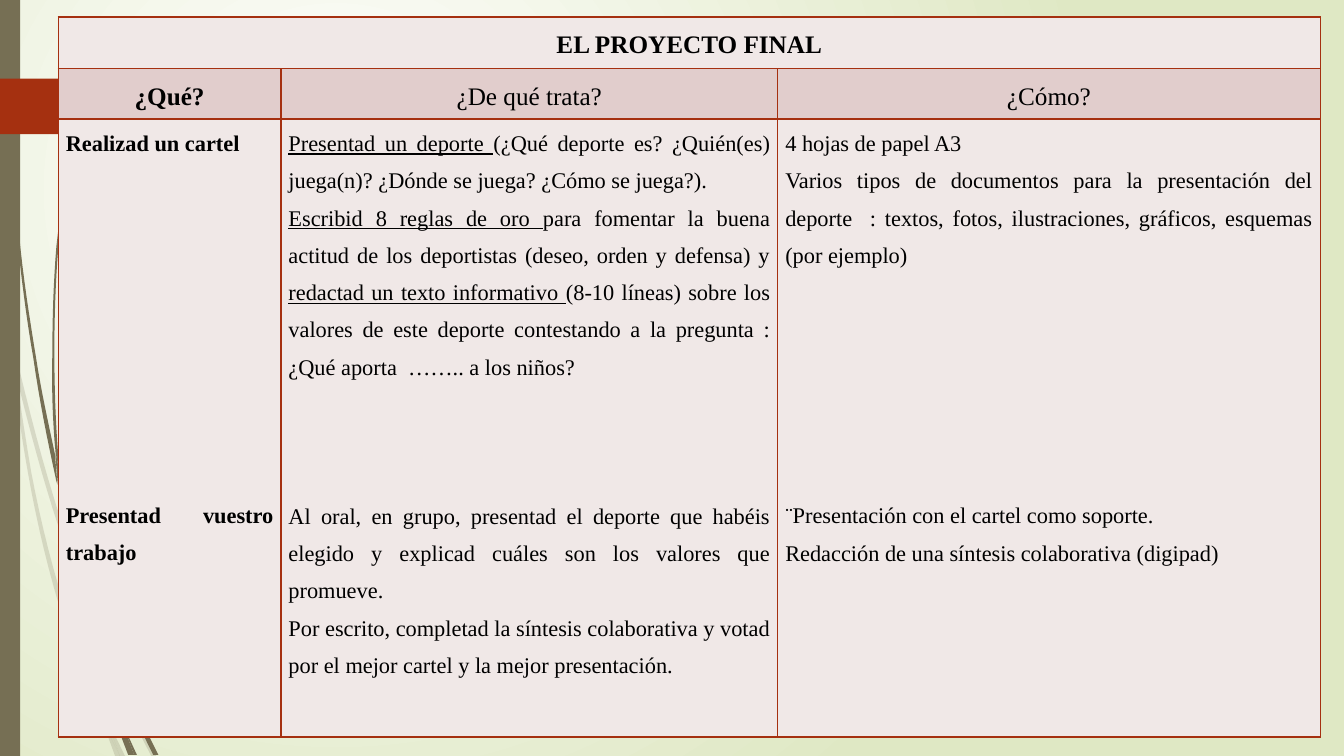
from dataclasses import dataclass
from itertools import product

from lxml.etree import SubElement
from pptx import Presentation
from pptx.dml.color import RGBColor
from pptx.enum.shapes import MSO_SHAPE
from pptx.enum.text import PP_ALIGN
from pptx.oxml import parse_xml
from pptx.oxml.ns import nsdecls, qn
from pptx.shapes.autoshape import Shape
from pptx.slide import Slide
from pptx.table import _Cell
from pptx.util import Cm, Pt

WHITE = RGBColor(0xFF, 0xFF, 0xFF)
BLACK = RGBColor(0x00, 0x00, 0x00)
PALE_GREEN = RGBColor(0xDF, 0xE8, 0xC4)
OLIVE = RGBColor(0x76, 0x6F, 0x54)
RUST = RGBColor(0xA5, 0x30, 0x10)
LIGHT_ROSE = RGBColor(0xF0, 0xE8, 0xE7)
ROSE = RGBColor(0xE1, 0xCD, 0xCC)

FONT = "Times New Roman"
LINE_SPACING = 1.5
BODY_SIZE = 16
HEADING_SIZE = 18
BODY_LINE = BODY_SIZE * 1.107 * LINE_SPACING
CURVE_STEPS = 8

COLUMN_WIDTHS = (5.61, 12.52, 13.67)
ROW_HEIGHTS = (1.3, 1.27, 15.57)


@dataclass(frozen=True)
class Phrase:
    text: str
    underlined: bool = False


@dataclass(frozen=True)
class Passage:
    phrases: tuple[Phrase, ...]
    lines_above: int = 0
    bold: bool = False
    size: int = BODY_SIZE
    align: PP_ALIGN = PP_ALIGN.JUSTIFY


@dataclass(frozen=True)
class Blade:
    start: tuple[float, float]
    segments: tuple[tuple[float, ...], ...]
    opacity: int = 100


def passage(text: str, lines_above: int = 0, bold: bool = False) -> Passage:
    return Passage((Phrase(text),), lines_above, bold)


def heading(text: str, bold: bool = False) -> Passage:
    return Passage((Phrase(text),), 0, bold, HEADING_SIZE, PP_ALIGN.CENTER)


PALE_BLADES = (
    Blade((1.47, 13.26), (
        (1.68, 13.92, 1.91, 14.55, 2.13, 15.21), (2.16, 14.88), (1.57, 13.21),
        (1.09, 11.76, 0.71, 10.26, 0.36, 8.76), (0.43, 9.55),
        (0.74, 10.8, 1.07, 12.04, 1.47, 13.26)), 20),
    Blade((2.34, 15.42), (
        (2.24, 15.14), (2.24, 15.49), (2.51, 16.23, 2.79, 16.92, 3.12, 17.63),
        (3.33, 18.11, 3.58, 18.59, 3.81, 19.05), (3.94, 19.05),
        (3.68, 18.57, 3.45, 18.08, 3.23, 17.58),
        (2.92, 16.87, 2.62, 16.15, 2.34, 15.42)), 20),
    Blade((3.02, 19.05), ((3.15, 19.05), (2.67, 18.06)), 20),
    Blade((2.36, 17.35), (
        (2.13, 16.81, 1.96, 16.28, 1.78, 15.72),
        (1.35, 14.48, 1.04, 13.21, 0.79, 11.91),
        (0.66, 11.13, 0.53, 10.34, 0.43, 9.55), (0.28, 8.89),
        (0.38, 9.91, 0.53, 10.92, 0.71, 11.94),
        (0.94, 13.23, 1.24, 14.5, 1.65, 15.77),
        (1.85, 16.41, 2.08, 17.02, 2.34, 17.6), (2.57, 18.14), (2.51, 17.96)), 20),
    Blade((2.57, 18.14), ((2.9, 19.05), (3.02, 19.05)), 20),
    Blade((2.44, 17.58), (
        (2.36, 17.35), (2.51, 17.96), (2.57, 18.14), (3.02, 19.05), (2.67, 18.06)), 20),
)
DARK_BLADES = (
    Blade((0.18, 2.79), (
        (0.23, 3.84, 0.3, 4.88, 0.43, 5.92), (0.53, 6.96, 0.66, 7.98, 0.84, 9.02),
        (0.99, 10.06, 1.19, 11.07, 1.42, 12.12), (1.45, 12.22), (1.4, 11.61),
        (1.4, 11.51), (1.22, 10.67, 1.04, 9.86, 0.91, 9.02),
        (0.74, 7.98, 0.58, 6.96, 0.48, 5.89), (0.36, 4.85, 0.25, 3.84, 0.2, 2.77),
        (0.13, 1.22), (0.1, 0), (0.08, 0), (0.1, 1.22))),
    Blade((2.87, 16.48), (
        (2.79, 16.28), (2.82, 16.66), (2.97, 17.12, 3.15, 17.55, 3.35, 17.98),
        (3.86, 19.02), (3.99, 19.02), (3.45, 17.93),
        (3.25, 17.45, 3.07, 16.97, 2.87, 16.48))),
    Blade((1.52, 11.99), (
        (1.47, 11.51), (1.4, 10.62, 1.37, 9.75, 1.37, 8.86),
        (1.37, 7.98, 1.4, 7.11, 1.47, 6.22), (1.6, 4.9), (1.78, 3.58), (1.57, 4.9),
        (1.42, 6.22), (1.35, 7.09, 1.32, 7.98, 1.32, 8.86),
        (1.3, 9.7, 1.32, 10.57, 1.4, 11.4))),
    Blade((1.45, 12.12), ((1.63, 12.83), (1.52, 11.99), (1.4, 11.4), (1.4, 11.51))),
    Blade((3.38, 19.02), ((3.45, 19.02), (3.1, 18.26))),
    Blade((2.97, 18.34), ((3.23, 19.02), (3.33, 19.02))),
    Blade((2.95, 17.93), (
        (2.79, 17.55), (2.95, 18.21), (2.97, 18.34), (3.3, 19.02), (3.38, 19.02),
        (3.1, 18.26))),
)

PROJECT_ROWS = (
    ((heading("EL PROYECTO FINAL", bold=True),), (), ()),
    ((heading("¿Qué?", bold=True),), (heading("¿De qué trata?"),), (heading("¿Cómo?"),)),
    (
        (passage("Realizad un cartel", bold=True),
         passage("Presentad vuestro trabajo", 9, bold=True)),
        (Passage((
            Phrase("Presentad un deporte ", True),
            Phrase("(¿Qué deporte es? ¿Quién(es) juega(n)? ¿Dónde se juega? ¿Cómo se juega?)."))),
         Passage((
             Phrase("Escribid 8 reglas de oro ", True),
             Phrase("para fomentar la buena actitud de los deportistas (deseo, orden y defensa) y "),
             Phrase("redactad un texto informativo ", True),
             Phrase("(8-10 líneas) sobre los valores de este deporte contestando a la pregunta : "
                    "¿Qué aporta  …….. a los niños?"))),
         passage("Al oral, en grupo, presentad el deporte que habéis elegido y explicad "
                 "cuáles son los valores que promueve.", 3),
         passage("Por escrito, completad la síntesis colaborativa y votad por el mejor "
                 "cartel y la mejor presentación.")),
        (passage("4 hojas de papel A3"),
         passage("Varios tipos de documentos para la presentación del deporte  : textos, "
                 "fotos, ilustraciones, gráficos, esquemas (por ejemplo)"),
         passage("¨Presentación con el cartel como soporte.", 6),
         passage("Redacción de una síntesis colaborativa (digipad)")),
    ),
)


def paint_background(slide: Slide) -> None:
    fill = slide.background.fill
    fill.gradient()
    for stop, color, position in zip(fill.gradient_stops, (WHITE, PALE_GREEN), (0, 1)):
        stop.color.rgb = color
        stop.position = position
    linear = slide.element.find(".//" + qn("a:lin"))
    linear.getparent().replace(linear, parse_xml(
        f'<a:path {nsdecls("a")} path="circle">'
        '<a:fillToRect l="50000" t="50000" r="100000" b="100000"/></a:path>'))


def paint(shape: Shape, color: RGBColor, opacity: int = 100) -> None:
    shape.shadow.inherit = False
    shape.fill.solid()
    shape.fill.fore_color.rgb = color
    shape.line.fill.background()
    if opacity < 100:
        tint = shape.element.spPr.find(qn("a:solidFill"))[0]
        SubElement(tint, qn("a:alpha")).set("val", str(opacity * 1000))


def draw_blade(slide: Slide, blade: Blade) -> None:
    outline = [blade.start]
    for segment in blade.segments:
        if len(segment) == 2:
            outline.append(segment)
            continue
        controls = (outline[-1], segment[:2], segment[2:4], segment[4:])
        for step in range(1, CURVE_STEPS + 1):
            t = step / CURVE_STEPS
            weights = ((1 - t) ** 3, 3 * t * (1 - t) ** 2, 3 * t * t * (1 - t), t ** 3)
            outline.append(tuple(
                sum(w * point[axis] for w, point in zip(weights, controls))
                for axis in (0, 1)))
    corners = [(Cm(x), Cm(y)) for x, y in outline]
    builder = slide.shapes.build_freeform(*corners[0])
    builder.add_line_segments(corners[1:], close=True)
    paint(builder.convert_to_shape(), OLIVE, blade.opacity)


def format_cell(cell: _Cell, color: RGBColor) -> None:
    cell.margin_left = cell.margin_right = Cm(0.19)
    cell.margin_top = cell.margin_bottom = 0
    cell.fill.solid()
    cell.fill.fore_color.rgb = color
    for index, side in enumerate(("lnL", "lnR", "lnT", "lnB")):
        cell._tc.tcPr.insert(index, parse_xml(
            f'<a:{side} {nsdecls("a")} w="{Pt(1)}"><a:solidFill>'
            f'<a:srgbClr val="{RUST}"/></a:solidFill></a:{side}>'))


def write_cell(cell: _Cell, passages: tuple[Passage, ...]) -> None:
    frame = cell.text_frame
    for index, content in enumerate(passages):
        paragraph = frame.add_paragraph() if index else frame.paragraphs[0]
        paragraph.alignment = content.align
        paragraph.line_spacing = LINE_SPACING
        if content.lines_above:
            paragraph.space_before = Pt(content.lines_above * BODY_LINE)
        font = paragraph.font
        font.name, font.size, font.bold = FONT, Pt(content.size), content.bold
        font.color.rgb = BLACK
        for phrase in content.phrases:
            run = paragraph.add_run()
            run.text = phrase.text
            if phrase.underlined:
                run.font.underline = True


def draw_project_table(slide: Slide) -> None:
    table = slide.shapes.add_table(
        len(ROW_HEIGHTS), len(COLUMN_WIDTHS), Cm(1.47), Cm(0.43),
        Cm(sum(COLUMN_WIDTHS)), Cm(sum(ROW_HEIGHTS))).table
    table.first_row = table.horz_banding = False
    for column, width in zip(table.columns, COLUMN_WIDTHS):
        column.width = Cm(width)
    for row, height in zip(table.rows, ROW_HEIGHTS):
        row.height = Cm(height)
    table.cell(0, 0).merge(table.cell(0, 2))
    for row, column in product(range(len(ROW_HEIGHTS)), range(len(COLUMN_WIDTHS))):
        cell = table.cell(row, column)
        format_cell(cell, ROSE if row == 1 else LIGHT_ROSE)
        write_cell(cell, PROJECT_ROWS[row][column])


def main() -> None:
    deck = Presentation()
    deck.slide_width, deck.slide_height = Cm(33.87), Cm(19.05)
    slide = deck.slides.add_slide(deck.slide_layouts[6])
    paint_background(slide)
    for blade in PALE_BLADES + DARK_BLADES:
        draw_blade(slide, blade)
    side_band = slide.shapes.add_shape(MSO_SHAPE.RECTANGLE, 0, 0, Cm(0.51), Cm(19.05))
    paint(side_band, OLIVE)
    page_tab = slide.shapes.add_shape(MSO_SHAPE.PENTAGON, 0, Cm(1.98), Cm(4.42), Cm(1.4))
    paint(page_tab, RUST)
    draw_project_table(slide)
    deck.save("out.pptx")


if __name__ == "__main__":
    main()
